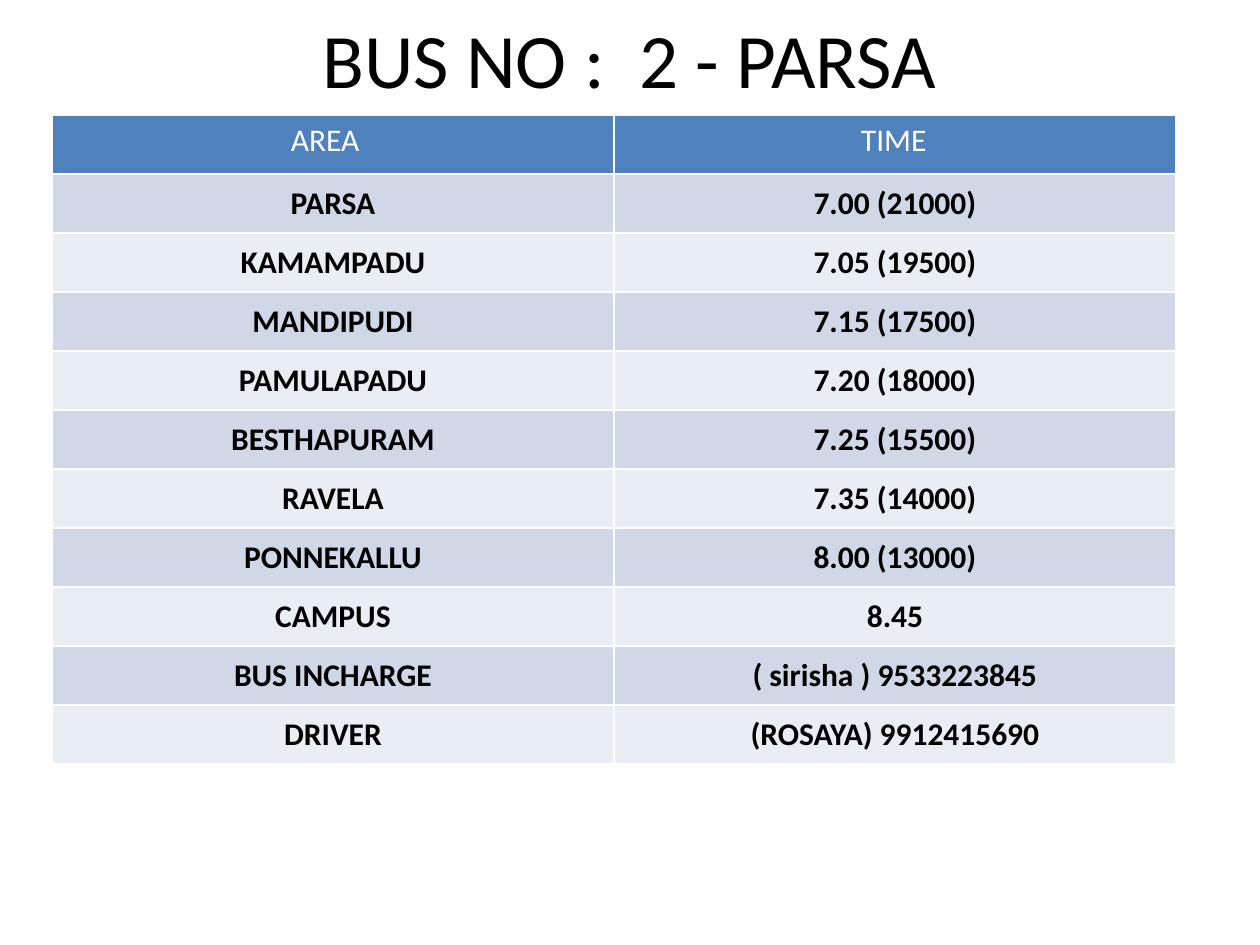
"""Build the timetable slide for bus number 2."""
from typing import NamedTuple

from pptx import Presentation
from pptx import util as u
from pptx.dml.color import RGBColor
from pptx.enum import text

PIXELS_PER_INCH = 126
FONT = "Calibri"
COLOURS = {
    "black": "000000",
    "white": "FFFFFF",
    "header": "4F81BD",
    "odd": "D0D8E8",
    "even": "E9EDF4",
}


class Stop(NamedTuple):
    area: str
    time: str


class Heading(NamedTuple):
    label: str
    indent: int


HEADINGS = [Heading("AREA", 239), Heading("TIME", 247)]
STOPS = [
    Stop("PARSA", "7.00 (21000)"),
    Stop("KAMAMPADU", "7.05 (19500)"),
    Stop("MANDIPUDI", "7.15 (17500)"),
    Stop("PAMULAPADU", "7.20 (18000)"),
    Stop("BESTHAPURAM", "7.25 (15500)"),
    Stop("RAVELA", "7.35 (14000)"),
    Stop("PONNEKALLU", "8.00 (13000)"),
    Stop("CAMPUS", "8.45"),
    Stop("BUS INCHARGE", "( sirisha ) 9533223845"),
    Stop("DRIVER", "(ROSAYA) 9912415690"),
]


def px(length: int) -> u.Emu:
    return u.Emu(round(length * u.Inches(1) / PIXELS_PER_INCH))


def format_paragraph(paragraph, size: int, colour: str, bold: bool, alignment) -> None:
    paragraph.alignment = alignment
    font = paragraph.font
    font.name = FONT
    font.size = u.Pt(size)
    font.bold = bold
    font.color.rgb = RGBColor.from_string(COLOURS[colour])


def fill_cell(cell, label: str, fill: str) -> None:
    cell.text = label
    cell.fill.solid()
    cell.fill.fore_color.rgb = RGBColor.from_string(COLOURS[fill])


def add_title(slide, label: str) -> None:
    title = slide.shapes.title
    title.left, title.top, title.width, title.height = px(94), px(0), px(1071), px(116)
    frame = title.text_frame
    frame.text = label
    frame.vertical_anchor = text.MSO_ANCHOR.MIDDLE
    format_paragraph(frame.paragraphs[0], 44, "black", False, text.PP_ALIGN.CENTER)


def add_timetable(slide, headings: list[Heading], stops: list[Stop]) -> None:
    row_count = len(stops) + 1
    row_height = 59
    table = slide.shapes.add_table(
        row_count, len(headings), px(52), px(115), px(1124), px(row_height * row_count)
    ).table
    for row in table.rows:
        row.height = px(row_height)

    for column, heading in enumerate(headings):
        cell = table.cell(0, column)
        fill_cell(cell, heading.label, "header")
        cell.margin_left = px(heading.indent)
        format_paragraph(
            cell.text_frame.paragraphs[0], 18, "white", False, text.PP_ALIGN.LEFT
        )

    for row_number, stop in enumerate(stops, start=1):
        for column, label in enumerate(stop):
            cell = table.cell(row_number, column)
            fill_cell(cell, label, "odd" if row_number % 2 else "even")
            cell.vertical_anchor = text.MSO_ANCHOR.MIDDLE
            cell.margin_left = cell.margin_top = cell.margin_right = px(1)
            cell.margin_bottom = 0
            format_paragraph(
                cell.text_frame.paragraphs[0], 18, "black", True, text.PP_ALIGN.CENTER
            )


def main() -> None:
    presentation = Presentation()
    presentation.slide_width = px(1260)
    presentation.slide_height = px(945)
    slide = presentation.slides.add_slide(presentation.slide_layouts.get_by_name("Title Only"))
    add_title(slide, "BUS NO :  2 - PARSA")
    add_timetable(slide, HEADINGS, STOPS)
    presentation.save("out.pptx")


if __name__ == "__main__":
    main()
